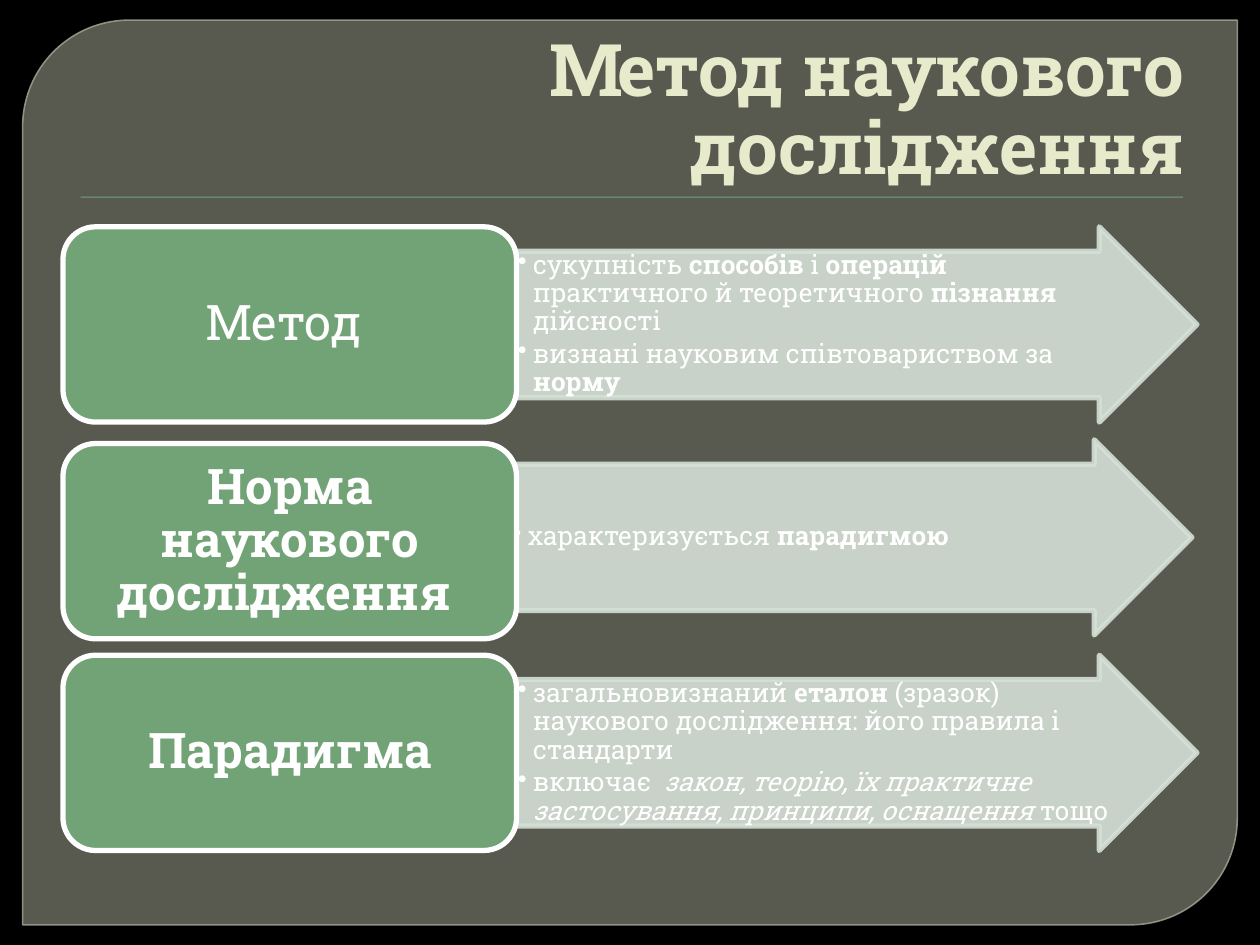
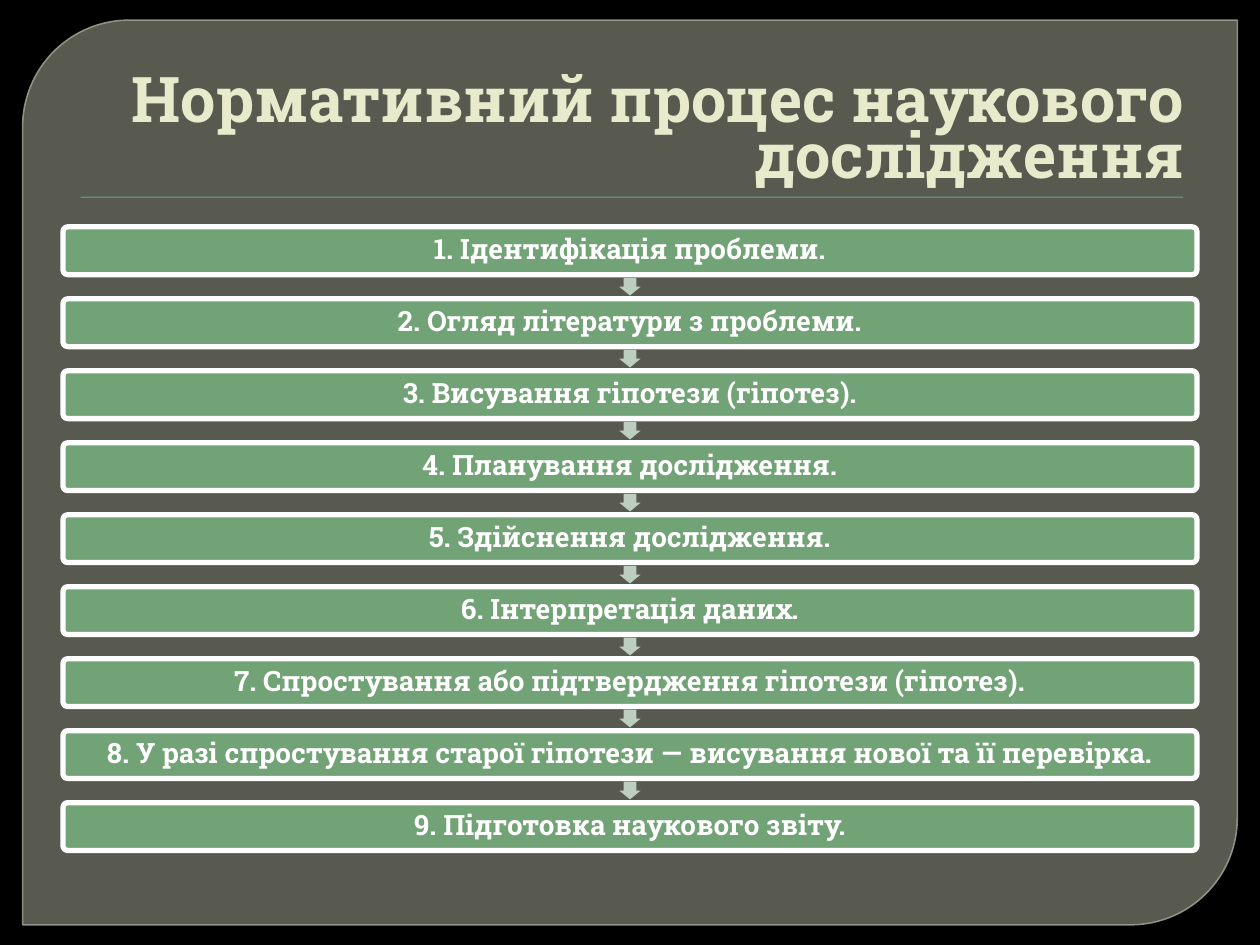
from dataclasses import dataclass

from lxml import etree
from pptx import Presentation
from pptx.dml.color import RGBColor
from pptx.enum.shapes import MSO_SHAPE
from pptx.enum.text import MSO_ANCHOR, MSO_AUTO_SIZE, PP_ALIGN
from pptx.oxml.ns import qn
from pptx.util import Inches, Pt

FRAME = MSO_SHAPE.ROUND_2_DIAG_RECTANGLE
RECTANGLE = MSO_SHAPE.RECTANGLE
ROUNDED = MSO_SHAPE.ROUNDED_RECTANGLE
RIGHT_ARROW = MSO_SHAPE.RIGHT_ARROW
DOWN_ARROW = MSO_SHAPE.DOWN_ARROW
LEFT, CENTER, RIGHT = PP_ALIGN.LEFT, PP_ALIGN.CENTER, PP_ALIGN.RIGHT
MIDDLE, BOTTOM = MSO_ANCHOR.MIDDLE, MSO_ANCHOR.BOTTOM
TITLE_ONLY = 5


@dataclass(frozen=True)
class Theme:
    font: str = "Roboto Slab"
    background: str = "000000"
    panel: str = "888B7B"
    panel_edge: str = "9DA090"
    title: str = "E7EACB"
    green: str = "72A376"
    pale_green: str = "D5E0D6"
    link_green: str = "BCCEBD"
    white: str = "FFFFFF"
    definition_title_size: float = 41.4
    process_title_size: float = 36
    term_size: float = 28
    detail_size: float = 15
    step_size: float = 16
    border: float = 3


def set_values(target, values):
    for name, value in values.items():
        setattr(target, name, value)


class Deck:
    """Holds the theme and the slide being built."""

    def __init__(self, theme):
        self.theme = theme
        self.presentation = Presentation()
        self.presentation.slide_width = Inches(10)
        self.presentation.slide_height = Inches(7.5)
        self.layout = self.presentation.slide_layouts[TITLE_ONLY]
        self.slide = None
        fill = self.presentation.slide_master.background.fill
        fill.solid()
        fill.fore_color.rgb = RGBColor.from_string(theme.background)

    def add_slide(self, title, size, line_spacing):
        first = self.slide is None
        self.slide = self.presentation.slides.add_slide(self.layout)
        if first:
            self.add_backdrop()
        shape = self.slide.shapes.title
        self.place(shape, (0.5, 0.28, 9, 1.25))
        self.add_text(shape, [[(title, "b")]], size, self.theme.title, RIGHT,
                      line_spacing, insets=(0.1, 0.02), anchor=BOTTOM)

    def add_backdrop(self):
        """Put the panel and the title rule on the shared layout."""
        theme = self.theme
        panel = self.add_shape(FRAME, (0.18, 0.16, 9.64, 7.18), theme.panel,
                               theme.panel_edge, 0.87, (0.118, 0), (65, 88))
        rule = self.add_shape(RECTANGLE, (0.64, 1.56, 8.75, 0.01), theme.green)
        for position, shape in enumerate((panel, rule), start=2):
            self.layout.shapes.element.insert(position, shape.element)

    def place(self, shape, box):
        names = ("left", "top", "width", "height")
        set_values(shape, dict(zip(names, map(Inches, box))))

    def add_shape(self, kind, box, fill, line=None, line_width=0,
                  adjustments=(), opacities=()):
        shape = self.slide.shapes.add_shape(kind, *map(Inches, box))
        shape.shadow.inherit = False
        for index, value in enumerate(adjustments):
            shape.adjustments[index] = value
        shape.fill.solid()
        shape.fill.fore_color.rgb = RGBColor.from_string(fill)
        if line:
            shape.line.color.rgb = RGBColor.from_string(line)
            shape.line.width = Pt(line_width)
        else:
            shape.line.fill.background()
        # Opacities follow the order fill, line
        colours = shape.element.spPr.iter(qn("a:srgbClr"))
        for opacity, colour in zip(opacities, colours):
            alpha = etree.SubElement(colour, qn("a:alpha"))
            alpha.set("val", str(opacity * 1000))
        return shape

    def add_text(self, shape, paragraphs, size, color, alignment=CENTER,
                 line_spacing=0.9, insets=(0, 0), anchor=MIDDLE,
                 space_after=0, bullet=False):
        """Each paragraph is a list of (text, style); style is "", "b" or "i"."""
        frame = shape.text_frame
        horizontal, vertical = map(Inches, insets)
        set_values(frame, {
            "word_wrap": True, "auto_size": MSO_AUTO_SIZE.NONE,
            "vertical_anchor": anchor,
            "margin_left": horizontal, "margin_right": horizontal,
            "margin_top": vertical, "margin_bottom": vertical,
        })
        for index, runs in enumerate(paragraphs):
            paragraph = frame.add_paragraph() if index else frame.paragraphs[0]
            set_values(paragraph, {
                "alignment": alignment, "line_spacing": line_spacing,
                "space_before": Pt(0), "space_after": Pt(space_after),
            })
            if bullet:
                self.add_bullet(paragraph)
            for text, style in runs:
                run = paragraph.add_run()
                run.text = text
                set_values(run.font, {
                    "name": self.theme.font, "size": Pt(size),
                    "bold": style == "b", "italic": style == "i",
                })
                run.font.color.rgb = RGBColor.from_string(color)

    def add_bullet(self, paragraph):
        properties = paragraph._p.get_or_add_pPr()
        indent = Inches(0.12)
        properties.set("marL", str(indent))
        properties.set("indent", str(-indent))
        etree.SubElement(properties, qn("a:buChar")).set("char", "•")

    def add_term(self, top, runs):
        theme = self.theme
        shape = self.add_shape(ROUNDED, (0.5, top, 3.6, 1.55), theme.green,
                               theme.white, theme.border)
        self.add_text(shape, [runs], theme.term_size, theme.white,
                      insets=(0.12, 0.06))

    def add_detail_arrow(self, left, top, paragraphs):
        theme = self.theme
        shape = self.add_shape(RIGHT_ARROW, (left, top, 5.4, 1.55),
                               theme.pale_green, theme.pale_green,
                               theme.border, (0.75, 0.5), (90, 90))
        self.add_text(shape, paragraphs, theme.detail_size, theme.white, LEFT,
                      insets=(0.01, 0.01), space_after=2.4, bullet=True)

    def add_step(self, top, height, text):
        theme = self.theme
        shape = self.add_shape(ROUNDED, (0.5, top, 9, height), theme.green,
                               theme.white, theme.border, (0.1,))
        self.add_text(shape, [[(text, "b")]], theme.step_size, theme.white,
                      insets=(0.07, 0.07))

    def add_step_link(self, middle):
        width, height = 0.17, 0.14
        box = (5 - width / 2, middle - height / 2, width, height)
        self.add_shape(DOWN_ARROW, box, self.theme.link_green,
                       adjustments=(0.6, 0.5))


# Term top, arrow position, term, details
DEFINITIONS = [
    (1.8, (4.1, 1.8), [("Метод ", "")], [
        [("сукупність ", ""), ("способів", "b"), (" і ", ""),
         ("операцій", "b"), (" практичного й теоретичного ", ""),
         ("пізнання ", "b"), ("дійсності", "")],
        [("визнані науковим співтовариством за ", ""), ("норму", "b")],
    ]),
    (3.52, (4.06, 3.49), [("Норма наукового дослідження ", "b")], [
        [("характеризується ", ""), ("парадигмою", "b")],
    ]),
    (5.2, (4.1, 5.2), [("Парадигма", "b")], [
        [("загальновизнаний ", ""), ("еталон", "b"),
         (" (зразок) наукового дослідження: його правила і стандарти", "")],
        [("включає  ", ""),
         ("закон, теорію, їх практичне застосування, принципи, оснащення ", "i"),
         ("тощо", "")],
    ]),
]

STEPS = [
    "Ідентифікація проблеми.",
    "Огляд літератури з проблеми.",
    "Висування гіпотези (гіпотез).",
    "Планування дослідження.",
    "Здійснення дослідження.",
    "Інтерпретація даних.",
    "Спростування або підтвердження гіпотези (гіпотез).",
    "У разі спростування старої гіпотези — висування нової та її перевірка.",
    "Підготовка наукового звіту.",
]


def build_definitions(deck):
    deck.add_slide("Метод наукового дослідження",
                   deck.theme.definition_title_size, 0.9)
    for term_top, (arrow_left, arrow_top), term, details in DEFINITIONS:
        deck.add_detail_arrow(arrow_left, arrow_top, details)
        deck.add_term(term_top, term)


def build_process(deck):
    deck.add_slide("Нормативний процес наукового дослідження",
                   deck.theme.process_title_size, 0.75)
    first_top, last_top, height = 1.8, 6.37, 0.38
    pitch = (last_top - first_top) / (len(STEPS) - 1)
    for index, step in enumerate(STEPS):
        top = first_top + index * pitch
        if index:
            deck.add_step_link(top - (pitch - height) / 2)
        deck.add_step(top, height, f"{index + 1}. {step}")


def main():
    deck = Deck(Theme())
    build_definitions(deck)
    build_process(deck)
    deck.presentation.save("out.pptx")


if __name__ == "__main__":
    main()
